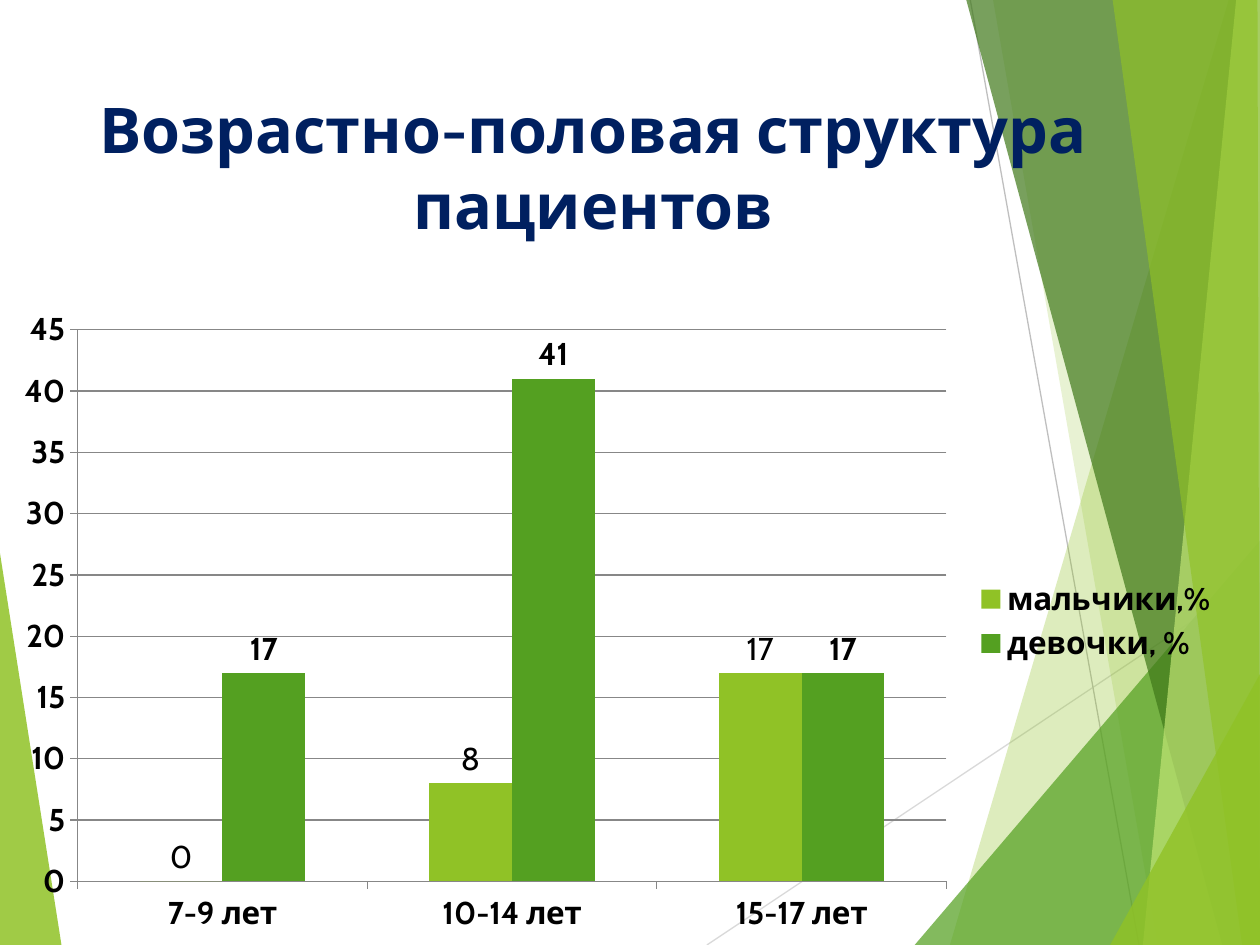
from lxml.etree import SubElement
from pptx import Presentation
from pptx.chart.data import CategoryChartData
from pptx.dml.color import RGBColor
from pptx.enum.chart import XL_CHART_TYPE, XL_LABEL_POSITION, XL_LEGEND_POSITION, XL_TICK_MARK
from pptx.enum.shapes import MSO_CONNECTOR
from pptx.enum.text import MSO_ANCHOR, PP_ALIGN
from pptx.oxml.ns import qn
from pptx.util import Cm, Pt

LIME = RGBColor(0x90, 0xC2, 0x26)
GREEN = RGBColor(0x54, 0xA0, 0x21)
FOREST = RGBColor(0x3F, 0x78, 0x19)
PALE = RGBColor(0xC0, 0xE4, 0x74)
NAVY = RGBColor(0x00, 0x20, 0x60)
BLACK = RGBColor(0x00, 0x00, 0x00)
GRID = RGBColor(0x87, 0x87, 0x87)
LIGHT_GREY = RGBColor(0xD9, 0xD9, 0xD9)
GREY = RGBColor(0xBF, 0xBF, 0xBF)
FONT = "Cabin"
W, H = 25.4, 19.05

TITLE = "Возрастно-половая структура пациентов"
AGES = ["7-9 лет", "10-14 лет", "15-17 лет"]
SERIES = [
    ("мальчики,%", [0, 8, 17], LIME, False),
    ("девочки, %", [17, 41, 17], GREEN, True),
]

LEFT_FACET = ([(0, 11.15), (1.24, H), (0, H)], LIME, 85)
RAYS = [
    ((14.25, H), (W, 11.61), LIGHT_GREY),
    ((19.56, 0), (22.96, H), GREY),
]
RIGHT_FACETS = [
    ([(24.77, 0), (19.15, H), (W, H), (W, 0)], LIME, 30),
    ([(20.02, 0), (23.34, H), (W, H), (W, 0)], LIME, 20),
    ([(18.44, H), (W, 10.9), (W, H)], GREEN, 72),
    ([(19.48, 0), (24.64, H), (W, H), (W, 0)], FOREST, 70),
    ([(24.92, 0), (23.04, H), (W, H), (W, 0)], PALE, 70),
    ([(22.43, 0), (25.04, H), (W, H), (25.35, 0)], LIME, 65),
    ([(22.38, H), (W, 13.59), (W, H)], LIME, 80),
]


def add_facet(s, points, color, opacity):
    start, *rest = [(Cm(x), Cm(y)) for x, y in points]
    builder = s.shapes.build_freeform(*start)
    builder.add_line_segments(rest)
    sp = builder.convert_to_shape()
    sp.shadow.inherit = False
    sp.line.fill.background()
    sp.fill.solid()
    sp.fill.fore_color.rgb = color
    clr = sp.fill._xPr.find(".//" + qn("a:srgbClr"))
    SubElement(clr, qn("a:alpha"), val=str(opacity * 1000))


def add_ray(s, start, end, color):
    ray = s.shapes.add_connector(MSO_CONNECTOR.STRAIGHT, *map(Cm, start + end))
    ray.line.color.rgb = color
    ray.line.width = Pt(0.75)
    SubElement(ray._element.spPr, qn("a:effectLst"))


def style_font(font, size, color, bold):
    font.name = FONT
    font.size = Pt(size)
    font.color.rgb = color
    font.bold = bold


def add_title(s):
    tf = s.shapes.add_textbox(Cm(1.7), Cm(1.7), Cm(20.52), Cm(3.66)).text_frame
    tf.word_wrap = True
    tf.vertical_anchor = MSO_ANCHOR.TOP
    p = tf.paragraphs[0]
    p.text = TITLE
    p.alignment = PP_ALIGN.CENTER
    style_font(p.runs[0].font, 36, NAVY, True)


def add_age_chart(s):
    data = CategoryChartData()
    data.categories = AGES
    for name, values, _, _ in SERIES:
        data.add_series(name, values)
    chart = s.shapes.add_chart(XL_CHART_TYPE.COLUMN_CLUSTERED,
                               Cm(0), Cm(6), Cm(24.82), Cm(13.05), data).chart
    style_font(chart.font, 18, BLACK, False)
    chart.has_title = False
    chart.has_legend = True
    chart.legend.position = XL_LEGEND_POSITION.RIGHT
    chart.legend.include_in_layout = False
    style_font(chart.legend.font, 18, BLACK, True)

    for axis in (chart.category_axis, chart.value_axis):
        axis.major_tick_mark = XL_TICK_MARK.OUTSIDE
        axis.format.line.color.rgb = GRID
        style_font(axis.tick_labels.font, 18, BLACK, True)
    axis = chart.value_axis
    axis.minimum_scale, axis.maximum_scale, axis.major_unit = 0, 45, 5
    axis.has_major_gridlines = True
    axis.major_gridlines.format.line.color.rgb = GRID

    plot = chart.plots[0]
    plot.gap_width = 150
    plot.overlap = 0
    plot.vary_by_categories = False
    for series, (_, _, color, bold) in zip(plot.series, SERIES):
        series.format.fill.solid()
        series.format.fill.fore_color.rgb = color
        labels = series.data_labels
        labels.show_value = True
        labels.position = XL_LABEL_POSITION.OUTSIDE_END
        style_font(labels.font, 18, BLACK, bold)


def main():
    prs = Presentation()
    prs.slide_width, prs.slide_height = Cm(W), Cm(H)
    s = prs.slides.add_slide(prs.slide_layouts[6])
    add_facet(s, *LEFT_FACET)
    for ray in RAYS:
        add_ray(s, *ray)
    for facet in RIGHT_FACETS:
        add_facet(s, *facet)
    add_title(s)
    add_age_chart(s)
    prs.save("out.pptx")


if __name__ == "__main__":
    main()
